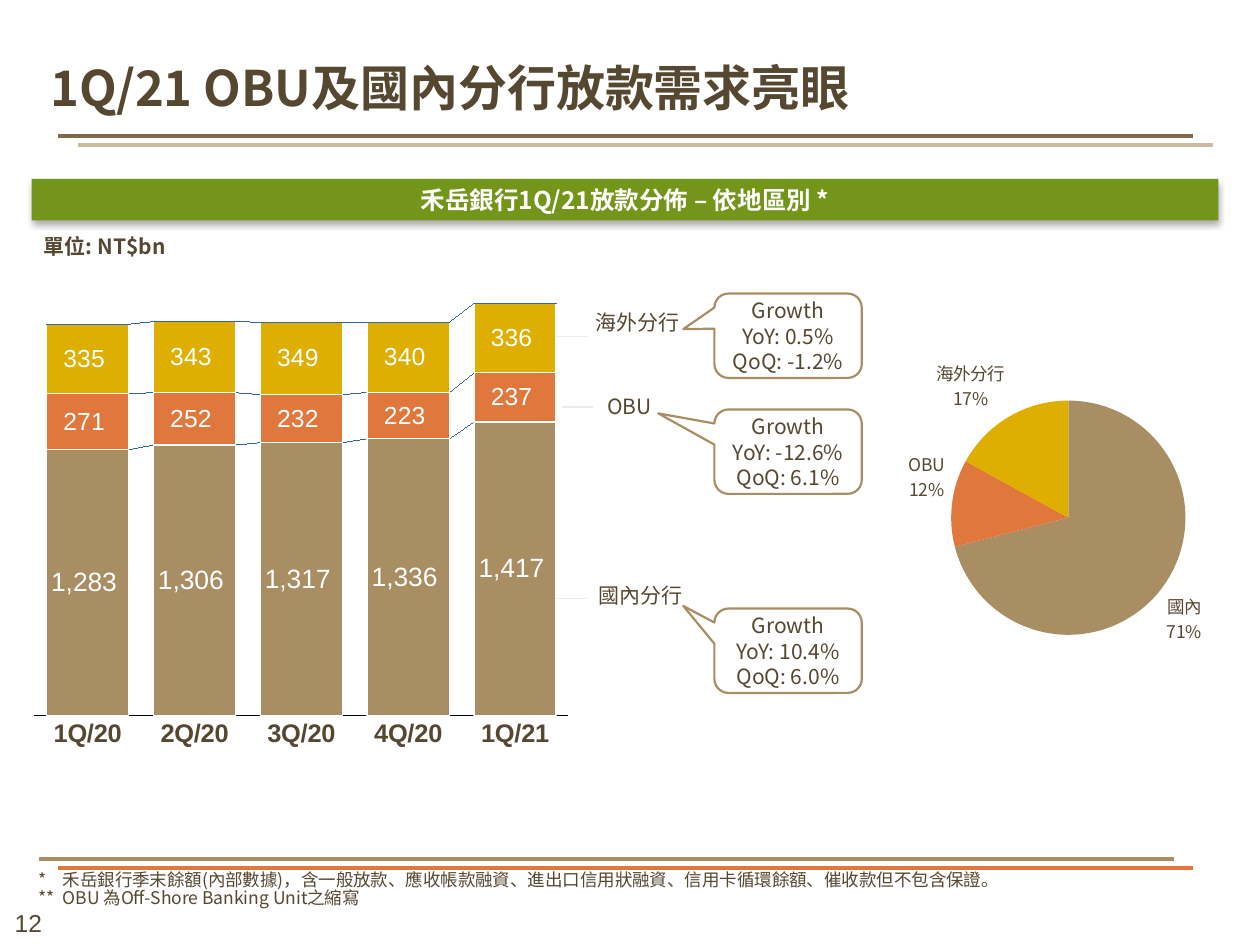
from lxml import etree
from pptx import Presentation
from pptx import util as u
from pptx.chart.data import CategoryChartData
from pptx.dml.color import RGBColor
from pptx.enum import chart as charts, shapes, text
from pptx.oxml import parse_xml
from pptx.oxml.ns import nsdecls, qn

COLORS = {"ink": "564730", "sand": "A98D63", "orange": "E0773C", "gold": "DEAE00",
          "green": "72951A", "brown": "826A47", "tan": "CBBBA1", "pale": "E7ECED",
          "white": "FFFFFF", "black": "000000", "blue": "2A5CA8"}
SANS, ARIAL = "Noto Sans CJK SC", "Arial"
REGIONS = ("sand", "orange", "gold")


def rgb(name):
    return RGBColor.from_string(COLORS[name])


def inches(*lengths):
    return [u.Inches(length) for length in lengths]


def set_attrs(target, **values):
    for name, value in values.items():
        setattr(target, name, value)


def style_font(font, size, color="ink", name=SANS, bold=False):
    set_attrs(font, size=u.Pt(size), bold=bold, name=name)
    font.color.rgb = rgb(color)
    latin = font._rPr.find(qn("a:latin"))
    latin.addnext(parse_xml(f'<a:ea {nsdecls("a")} typeface="{name}"/>'))


def write(box, lines, size, insets=(0.1, 0.02, 0.1, 0.02), align="LEFT", anchor="TOP",
          hanging=None, para_format=None, **font):
    frame = box.text_frame
    left, top, right, bottom = inches(*insets)
    set_attrs(frame, word_wrap=True, margin_left=left, margin_top=top, margin_right=right,
              margin_bottom=bottom, vertical_anchor=getattr(text.MSO_ANCHOR, anchor))
    for index, line in enumerate(lines):
        para = frame.paragraphs[0] if index == 0 else frame.add_paragraph()
        set_attrs(para, alignment=getattr(text.PP_ALIGN, align), **(para_format or {}))
        if hanging:
            indent = u.Inches(hanging)
            para._p.get_or_add_pPr().set("marL", str(indent))
            para._p.get_or_add_pPr().set("indent", str(-indent))
            if index:
                para.space_before = u.Pt(4)
        span = para.add_run()
        span.text = line
        style_font(span.font, size, **font)


def add_text(page, at, lines, size, **options):
    box = page.shapes.add_textbox(*inches(*at))
    write(box, lines, size, **options)


def add_rule(page, left, top, width, color, weight):
    rule = page.shapes.add_connector(shapes.MSO_CONNECTOR.STRAIGHT,
                                     *inches(left, top, left + width, top))
    rule.line.color.rgb = rgb(color)
    rule.line.width = u.Pt(weight)
    etree.SubElement(rule._element.spPr, qn("a:effectLst"))


def add_double_rule(page, rules):
    for left, top, color in rules:
        add_rule(page, left, top, 9.01, color, 2.25)


def set_plot_layout(chart, *layout):
    area = chart._chartSpace.chart.plotArea
    for old in area.findall(qn("c:layout")):
        area.remove(old)
    parts = "".join(f'<c:{tag} val="{value}"/>' for tag, value in zip("xywh", layout))
    area.insert(0, parse_xml(
        f'<c:layout {nsdecls("c")}><c:manualLayout><c:layoutTarget val="inner"/>'
        f'<c:xMode val="edge"/><c:yMode val="edge"/>{parts}</c:manualLayout></c:layout>'))


def add_chart(page, at, kind, categories, rows):
    data = CategoryChartData()
    data.categories = categories
    for name, values in rows:
        data.add_series(name, values)
    chart = page.shapes.add_chart(kind, *inches(*at), data).chart
    set_attrs(chart, has_legend=False, has_title=False)
    style_font(chart.font, 10)
    return chart


def paint(part, color):
    part.format.fill.solid()
    part.format.fill.fore_color.rgb = rgb(color)


def add_loan_columns(page, at):
    chart = add_chart(page, at, charts.XL_CHART_TYPE.COLUMN_STACKED,
                      ["1Q/20", "2Q/20", "3Q/20", "4Q/20", "1Q/21"],
                      [("國內分行", (1283, 1306, 1317, 1336, 1417)),
                       ("OBU", (271, 252, 232, 223, 237)),
                       ("海外分行", (335, 343, 349, 340, 336))])
    set_plot_layout(chart, 0.024, 0.006, 0.906, 0.898)
    plot = chart.plots[0]
    set_attrs(plot, gap_width=30, overlap=100, vary_by_categories=False)
    for series, color, size in zip(plot.series, REGIONS, (15.1, 14.1, 14.1)):
        paint(series, color)
        series.format.line.color.rgb = rgb("white")
        series.format.line.width = u.Pt(0.75)
        labels = series.data_labels
        set_attrs(labels, show_value=True, number_format="#,##0_ ",
                  number_format_is_linked=False, position=charts.XL_LABEL_POSITION.CENTER)
        style_font(labels.font, size, "white", ARIAL)
    # Lines joining the stacks
    plot._element.find(qn("c:overlap")).addnext(parse_xml(
        f'<c:serLines {nsdecls("c", "a")}><c:spPr><a:ln w="6350"><a:solidFill>'
        f'<a:srgbClr val="{COLORS["blue"]}"/></a:solidFill></a:ln></c:spPr></c:serLines>'))
    set_attrs(chart.value_axis, visible=False, has_major_gridlines=False,
              minimum_scale=0, maximum_scale=2500)
    axis = chart.category_axis
    axis.major_tick_mark = charts.XL_TICK_MARK.NONE
    axis.format.line.color.rgb = rgb("black")
    axis.format.line.width = u.Pt(0.34)
    style_font(axis.tick_labels.font, 14.5, name=ARIAL, bold=True)


def add_share_pie(page, at):
    chart = add_chart(page, at, charts.XL_CHART_TYPE.PIE, ["國內", "OBU", "海外分行"],
                      [("放款分佈", (71, 12, 17))])
    set_plot_layout(chart, 0.285, 0.275, 0.459, 0.492)
    plot = chart.plots[0]
    plot.vary_by_categories = True
    series = plot.series[0]
    for index, color in enumerate(REGIONS):
        paint(series.points[index], color)
        series.points[index].format.line.fill.background()
    labels = series.data_labels
    set_attrs(labels, show_value=False, show_percentage=True, show_category_name=True,
              number_format="0%", number_format_is_linked=False,
              position=charts.XL_LABEL_POSITION.OUTSIDE_END)
    style_font(labels.font, 10)
    separator = etree.Element(qn("c:separator"))
    separator.text = "\n"
    labels._element.find(qn("c:showBubbleSize")).addnext(separator)


def add_banner(page, at):
    banner = page.shapes.add_shape(shapes.MSO_SHAPE.RECTANGLE, *inches(*at))
    banner.fill.solid()
    banner.fill.fore_color.rgb = rgb("green")
    banner.line.fill.background()
    banner._element.spPr.append(parse_xml(
        f'<a:effectLst {nsdecls("a")}><a:outerShdw blurRad="44450" dist="27940" dir="5400000">'
        f'<a:srgbClr val="{COLORS["black"]}"><a:alpha val="32000"/></a:srgbClr>'
        '</a:outerShdw></a:effectLst>'))
    write(banner, ["禾岳銀行1Q/21放款分佈 – 依地區別 *"], 14, align="CENTER", anchor="MIDDLE",
          color="white", bold=True)


def add_growth(page, at, tail, yoy, qoq):
    callout = page.shapes.add_shape(shapes.MSO_SHAPE.ROUNDED_RECTANGULAR_CALLOUT, *inches(*at))
    for index, value in enumerate((*tail, 0.167)):
        callout.adjustments[index] = value
    callout.shadow.inherit = False
    callout.fill.background()
    callout.line.color.rgb = rgb("sand")
    callout.line.width = u.Pt(1.25)
    write(callout, ["Growth", f"YoY: {yoy}", f"QoQ: {qoq}"], 12, (0.02,) * 4,
          align="CENTER", anchor="MIDDLE")


def add_region_notes(page):
    # Label box, leader start, callout top and tail, growth rates
    notes = [("海外分行", (4.5, 2.42, 1.12, 0.28), (4.42, 2.67), 2.33, (-0.711, -0.078), "0.5%", "-1.2%"),
             ("OBU", (4.33, 3.08, 1.33, 0.28), (4.46, 3.23), 3.25, (-0.881, -0.453), "-12.6%", "6.1%"),
             ("國內分行", (4.42, 4.58, 1.33, 0.28), (4.42, 4.75), 4.83, (-0.711, -0.531), "10.4%", "6.0%")]
    for label, at, leader, top, tail, yoy, qoq in notes:
        add_text(page, at, [label], 12, insets=(0.04,) * 4, align="CENTER")
        add_rule(page, *leader, 0.25, "pale", 0.75)
        add_growth(page, (5.67, top, 1.17, 0.67), tail, yoy, qoq)


def add_header(page):
    add_text(page, (0.4, 0.17, 9.33, 0.75), ["1Q/21 OBU及國內分行放款需求亮眼"], 28,
             insets=(0,) * 4, anchor="BOTTOM", bold=True,
             para_format={"line_spacing": u.Pt(40)})
    add_double_rule(page, [(0.62, 1.15, "tan"), (0.46, 1.08, "brown")])


def add_footer(page):
    add_double_rule(page, [(0.46, 6.89, "orange"), (0.31, 6.82, "sand")])
    add_text(page, (0.21, 6.95, 9.33, 0.29),
             ["*\t禾岳銀行季末餘額(內部數據)，含一般放款、應收帳款融資、進出口信用狀融資、信用卡循環餘額、催收款但不包含保證。",
              "**\tOBU 為Off-Shore Banking Unit之縮寫"], 10, hanging=0.19,
             para_format={"line_spacing": 0.5})
    add_text(page, (-0.17, 7.16, 0.79, 0.34), ["12"], 14, insets=(0.1, 0.05, 0.1, 0.05),
             align="CENTER", name=ARIAL)


def main():
    deck = Presentation()
    deck.slide_width, deck.slide_height = inches(10, 7.5)
    page = deck.slides.add_slide(deck.slide_layouts[6])
    add_header(page)
    add_banner(page, (0.25, 1.42, 9.42, 0.33))
    add_text(page, (0.25, 1.83, 1.67, 0.24), ["單位: NT$bn"], 12, bold=True)
    add_share_pie(page, (6.39, 2.14, 4.06, 3.78))
    add_loan_columns(page, (0.16, 1.54, 4.68, 4.58))
    add_region_notes(page)
    add_footer(page)
    deck.save("out.pptx")


if __name__ == "__main__":
    main()
